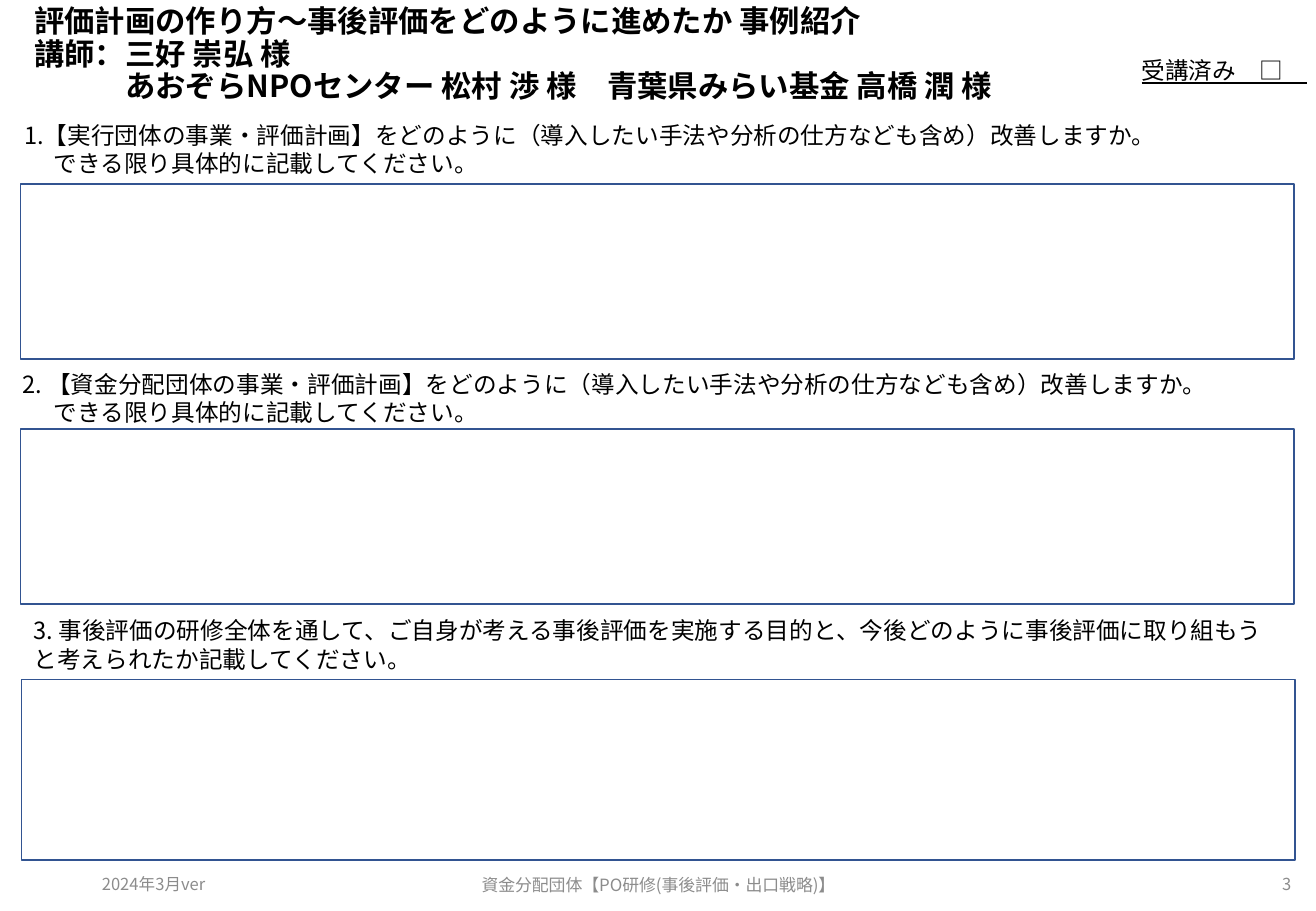
import pptx
import pptx.util
import pptx.dml.color
import pptx.enum.shapes
import pptx.enum.text
import pptx.oxml.ns
import lxml.etree

Pt = pptx.util.Pt
Align = pptx.enum.text.PP_ALIGN
Anchor = pptx.enum.text.MSO_ANCHOR
FONT = "Noto Sans CJK JP"


def color(value):
    return pptx.dml.color.RGBColor.from_string(value)


def write(box, area, lines, size, ink="000000", anchor=Anchor.TOP, align=Align.LEFT,
          indent=0, spacing=1.0, **styles):
    for name, value in zip(("left", "top", "width", "height"), area):
        setattr(box, name, Pt(value))
    frame = box.text_frame
    frame.text = "\n".join(lines)
    frame_format = {"word_wrap": True, "vertical_anchor": anchor,
                    "auto_size": pptx.enum.text.MSO_AUTO_SIZE.NONE}
    for name, value in frame_format.items():
        setattr(frame, name, value)
    for para in frame.paragraphs:
        para.alignment = align
        para.line_spacing = spacing
        for span in para.runs:
            for name, value in {"name": FONT, "size": Pt(size), **styles}.items():
                setattr(span.font, name, value)
            span.font.color.rgb = color(ink)
            east_asian = lxml.etree.SubElement(span.font._element, pptx.oxml.ns.qn("a:ea"))
            east_asian.set("typeface", FONT)
    if indent:
        properties = frame.paragraphs[-1]._p.get_or_add_pPr()
        properties.set("marL", str(Pt(indent)))
        properties.set("indent", "0")


deck = pptx.Presentation()
deck.slide_width = Pt(780)
deck.slide_height = Pt(540)
page = deck.slides.add_slide(deck.slide_layouts[5])

write(page.shapes.title, (13, -3, 714, 71.5),
      ["評価計画の作り方～事後評価をどのように進めたか 事例紹介",
       "講師：三好 崇弘 様",
       "あおぞらNPOセンター 松村 渉 様　青葉県みらい基金 高橋 潤 様"],
      18, anchor=Anchor.MIDDLE, indent=54, spacing=0.9, bold=True)

answer_areas = [(12.2, 109, 754.6, 103.7), (12.2, 254.5, 754.6, 103.7), (12.8, 402.8, 754.6, 107)]
for area in answer_areas:
    box = page.shapes.add_shape(pptx.enum.shapes.MSO_SHAPE.RECTANGLE, *map(Pt, area))
    box.shadow.inherit = False
    box.fill.solid()
    box.fill.fore_color.rgb = color("FFFFFF")
    box.line.color.rgb = color("325491")
    box.line.width = Pt(1)

detail = "できる限り具体的に記載してください。"
questions = [
    ((7.2, 68.2, 765, 41), 17.6,
     ["1.【実行団体の事業・評価計画】をどのように（導入したい手法や分析の仕方なども含め）改善しますか。", detail]),
    ((6, 215.5, 766, 41), 18.8,
     ["2. 【資金分配団体の事業・評価計画】をどのように（導入したい手法や分析の仕方なども含め）改善しますか。", detail]),
    ((12.8, 361.7, 748, 41), 0,
     ["3. 事後評価の研修全体を通して、ご自身が考える事後評価を実施する目的と、"
      "今後どのように事後評価に取り組もうと考えられたか記載してください。"]),
]
for area, indent, lines in questions:
    write(page.shapes.add_textbox(0, 0, 0, 0), area, lines, 14, indent=indent)

write(page.shapes.add_textbox(0, 0, 0, 0), (669.6, 29.5, 144.7, 24.5),
      ["受講済み　□　"], 14, underline=True)

footers = [
    ((53.3, 509.8, 175.7, 28.8), "2024年3月ver", 9.8, Align.LEFT),
    ((258.5, 509.8, 263.5, 28.8), "資金分配団体【PO研修(事後評価・出口戦略)】", 10, Align.CENTER),
    ((596.9, 509.8, 175.7, 28.8), "3", 9.8, Align.RIGHT),
]
for area, words, size, align in footers:
    write(page.shapes.add_textbox(0, 0, 0, 0), area, [words], size,
          ink="8C8C8C", anchor=Anchor.MIDDLE, align=align)

deck.save("out.pptx")
